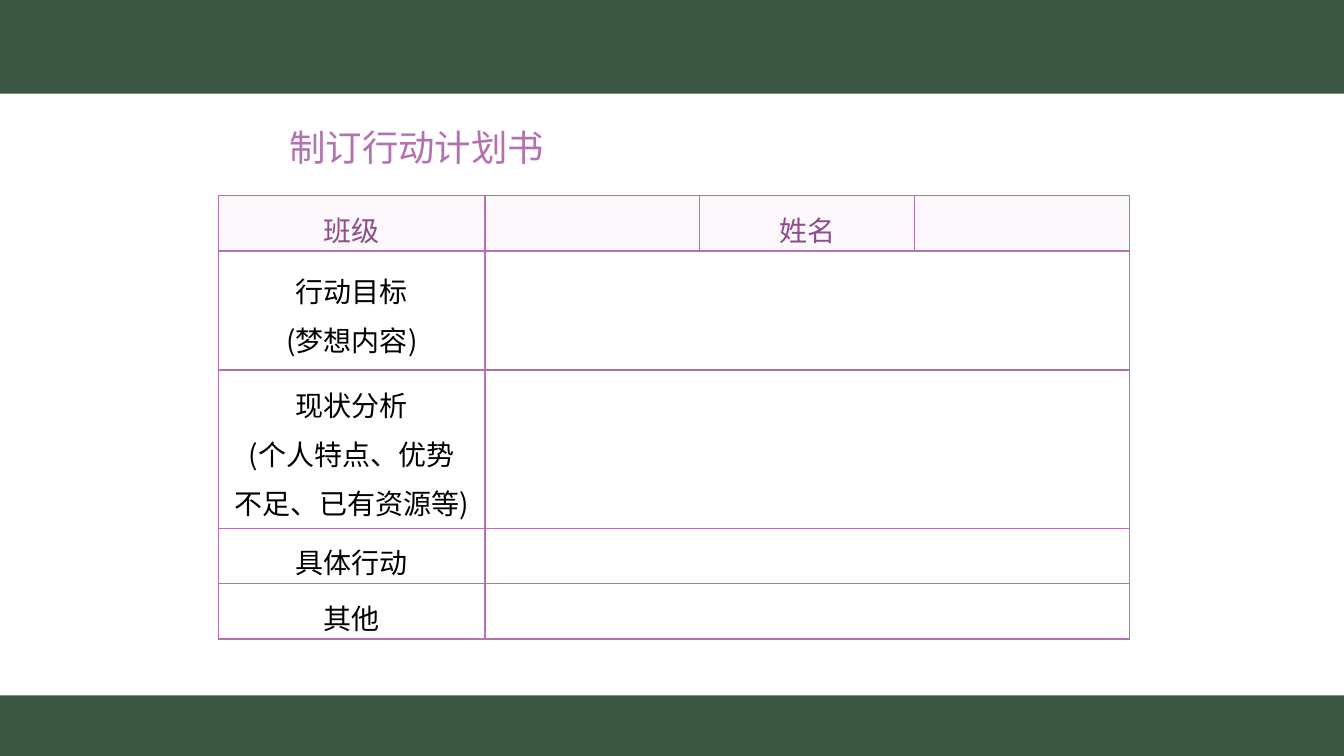
import pptx
import pptx.util
import pptx.dml.color
import pptx.enum.shapes
import pptx.enum.text
import pptx.oxml
import pptx.oxml.ns
import lxml.etree

Inches = pptx.util.Inches
SANS, SERIF = "Noto Sans CJK SC", "Times New Roman"
GREEN, PINK, PLUM = "3B5643", "B371AF", "8E4C8A"
PALE, WHITE, BLACK = "FBF7FB", "FFFFFF", "000000"
WIDE, HIGH = 13.33, 7.5


def color(code):
    return pptx.dml.color.RGBColor.from_string(code)


def sub(parent, tag, **attrs):
    return lxml.etree.SubElement(parent, pptx.oxml.ns.qn(tag), **attrs)


def add_run(para, text, size, face, code):
    run = para.add_run()
    run.text = text
    run.font.size = pptx.util.Pt(size)
    run.font.name = face
    run.font.color.rgb = color(code)
    sub(run.font._element, "a:ea", typeface=SANS)


def add_band(slide, left, top, width, height):
    band = slide.shapes.add_shape(
        pptx.enum.shapes.MSO_SHAPE.RECTANGLE,
        Inches(left), Inches(top), Inches(width), Inches(height))
    band.shadow.inherit = False
    band.fill.solid()
    band.fill.fore_color.rgb = color(GREEN)
    band.line.fill.background()


def add_title(slide, left, top, width, height):
    box = slide.shapes.add_textbox(
        Inches(left), Inches(top), Inches(width), Inches(height))
    box.text_frame.word_wrap = True
    para = box.text_frame.paragraphs[0]
    para.line_spacing = 1.5
    para._p.get_or_add_pPr().set("marL", str(Inches(0.72)))
    add_run(para, "制订行动计划书", 26, "Arial", PINK)


def add_edges(cell):
    """Draw the four borders of a cell, which come before its fill."""
    props = cell._tc.get_or_add_tcPr()
    for side in ("a:lnL", "a:lnR", "a:lnT", "a:lnB"):
        line = sub(props, side, w=str(pptx.util.Pt(1)))
        sub(sub(line, "a:solidFill"), "a:srgbClr", val=PINK)


def fill_cell(cell, lines, ink, back):
    add_edges(cell)
    cell.fill.solid()
    cell.fill.fore_color.rgb = color(back)
    cell.vertical_anchor = pptx.enum.text.MSO_ANCHOR.MIDDLE
    frame = cell.text_frame
    for n, line in enumerate(lines):
        para = frame.add_paragraph() if n else frame.paragraphs[0]
        para.alignment = pptx.enum.text.PP_ALIGN.CENTER
        para.line_spacing = 1.2
        for text in line:
            add_run(para, text, 20, SANS if text in "()" else SERIF, ink)


def add_plan(slide, left, top, cols, rows):
    heads = [[["班级"]], [], [["姓名"]], []]
    labels = [
        [["行动目标"], ["(", "梦想内容", ")"]],
        [["现状分析"], ["(", "个人特点、优势"], ["不足、已有资源等", ")"]],
        [["具体行动"]],
        [["其他"]],
    ]
    frame = slide.shapes.add_table(
        len(rows), len(cols), Inches(left), Inches(top),
        Inches(sum(cols)), Inches(sum(rows)))
    table = frame.table
    table.horz_banding = False
    for col, width in zip(table.columns, cols):
        col.width = Inches(width)
    for row, height in zip(table.rows, rows):
        row.height = Inches(height)
    for c, lines in enumerate(heads):
        fill_cell(table.cell(0, c), lines, PLUM, PALE)
    for r, lines in enumerate(labels, 1):
        for c in range(len(cols)):
            fill_cell(table.cell(r, c), [] if c else lines, BLACK, WHITE)
        table.cell(r, 1).merge(table.cell(r, len(cols) - 1))


def main():
    deck = pptx.Presentation()
    deck.slide_width, deck.slide_height = Inches(WIDE), Inches(HIGH)
    slide = deck.slides.add_slide(deck.slide_layouts[6])
    add_band(slide, 0, 0, WIDE, 0.93)
    add_band(slide, 0, 6.9, WIDE, HIGH - 6.9)
    add_title(slide, 2.05, 0.98, 6.82, 0.69)
    add_plan(slide, 2.17, 1.94, [2.64] + [2.13] * 3,
             [0.55, 1.18, 1.57, 0.55, 0.55])
    deck.save("out.pptx")


if __name__ == "__main__":
    main()
